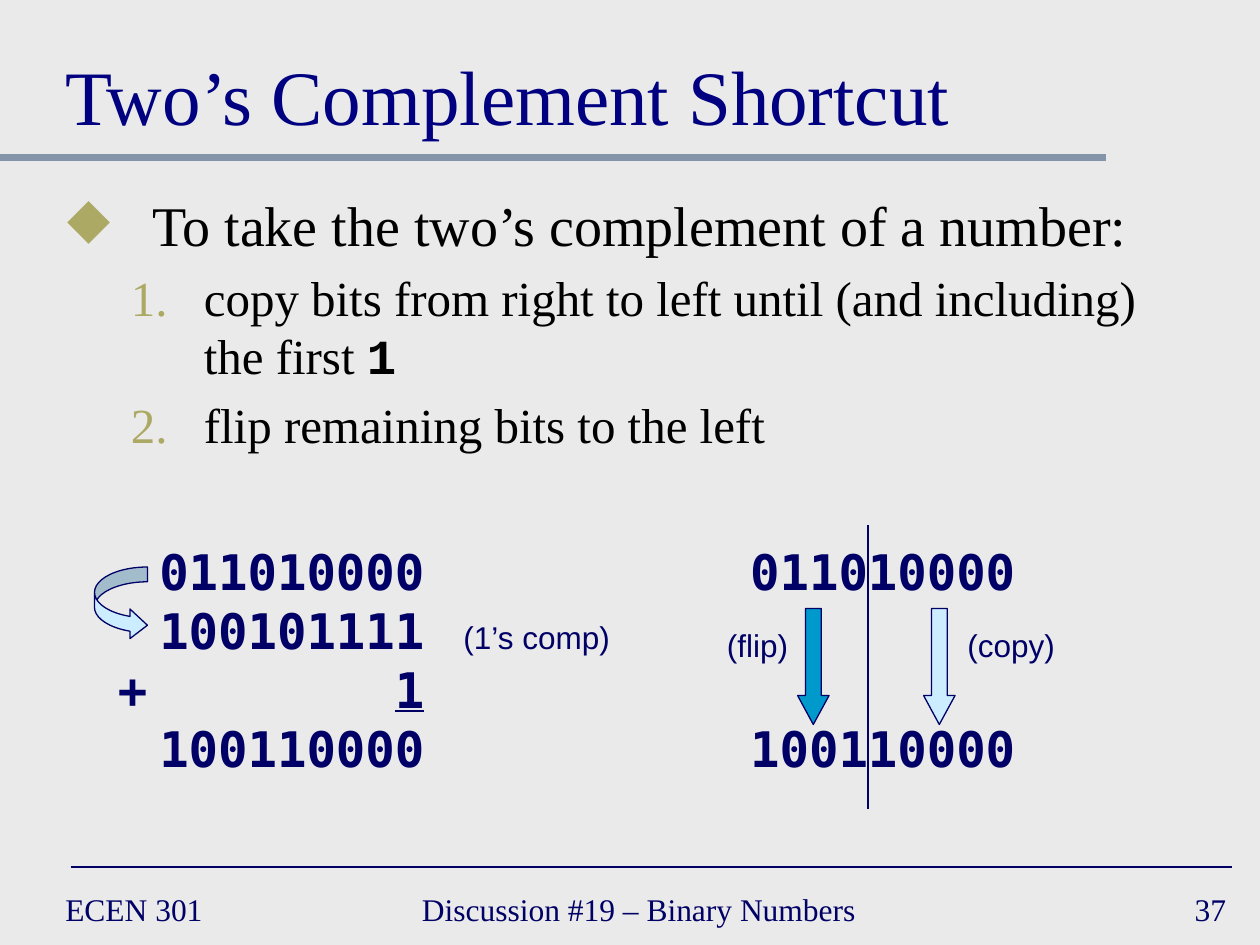
from dataclasses import dataclass

from lxml import etree
from pptx import Presentation
from pptx.dml.color import RGBColor
from pptx.enum.shapes import MSO_CONNECTOR, MSO_SHAPE
from pptx.enum.text import MSO_ANCHOR, PP_ALIGN
from pptx.oxml.ns import qn
from pptx.util import Inches, Pt

STRAIGHT = MSO_CONNECTOR.STRAIGHT
DOWN, CURVED = MSO_SHAPE.DOWN_ARROW, MSO_SHAPE.CURVED_RIGHT_ARROW
TOP, MIDDLE, BOTTOM = MSO_ANCHOR.TOP, MSO_ANCHOR.MIDDLE, MSO_ANCHOR.BOTTOM
LEFT, RIGHT = PP_ALIGN.LEFT, PP_ALIGN.RIGHT


@dataclass(frozen=True)
class Theme:
    background: str = "EAEAEA"
    title: str = "000080"
    body: str = "000000"
    ink: str = "000066"
    bullet: str = "ACA964"
    rule: str = "8495A9"
    pale: str = "CCECFF"
    strong: str = "0099CC"
    serif: str = "Times New Roman"
    sans: str = "Arial"
    digits: str = "DejaVu Sans Mono"
    code: str = "Courier New"
    title_size: int = 44
    lead_size: int = 32
    step_size: int = 28
    small_size: int = 18


THEME = Theme()
TITLE = "Two’s Complement Shortcut"
LEAD = "To take the two’s complement of a number:"
STEPS = [
    [("copy bits from right to left until (and including) the first ", False), ("1", True)],
    [("flip remaining bits to the left", False)],
]
FOOTER = [
    ("ECEN 301", 0.42, 2.17, LEFT),
    ("Discussion #19 – Binary Numbers", 3.25, 3.83, LEFT),
    ("37", 7.75, 2.08, RIGHT),
]
TAB_STOPS = [(0.24, "r"), (2.44, "r"), (2.75, "l"), (4.07, "r"), (7.13, "r"), (7.37, "l")]
SUM_ROWS = [
    [("\t\t011010000\t\t\t011010000", "digits")],
    [("\t\t100101111\t", "digits"), ("(1’s comp)", "note")],
    [("\t+\t", "digits"), ("1", "underlined")],
    [("\t\t100110000\t\t\t100110000", "digits")],
]
NOTES = [("(copy)", 7.58, 0.9), ("(flip)", 5.67, 0.69)]
ARROWS = [
    (CURVED, 0.75, 4.5, 0.42, 0.58, THEME.pale, (0.28, 0.56, 0.33)),
    (DOWN, 7.33, 4.83, 0.25, 0.92, THEME.pale, (0.5, 0.92)),
    (DOWN, 6.33, 4.83, 0.25, 0.92, THEME.strong, (0.5, 0.92)),
]
LINES = [
    (0, 1.25, 8.78, 1.25, THEME.rule, 4),
    (0.56, 6.88, 9.78, 6.88, THEME.ink, 1),
    (6.89, 4.17, 6.89, 6.42, THEME.ink, 0.75),
]


def style(run, size, face, color, bold=False, underline=False):
    font = run.font
    font.size, font.name, font.bold = Pt(size), face, bold
    font.color.rgb = RGBColor.from_string(color)
    if underline:
        font.underline = True


def add_frame(slide, left, top, width, height, anchor=TOP, wrap=True):
    frame = slide.shapes.add_textbox(*map(Inches, (left, top, width, height))).text_frame
    frame.word_wrap, frame.vertical_anchor = wrap, anchor
    return frame


def add_label(slide, text, box, size, face, color, anchor=TOP, align=LEFT, wrap=True):
    frame = add_frame(slide, *box, anchor, wrap)
    frame.text = text
    paragraph = frame.paragraphs[0]
    paragraph.alignment = align
    style(paragraph.runs[0], size, face, color)


def add_run(paragraph, text, *look):
    run = paragraph.add_run()
    run.text = text
    style(run, *look)


def add_bullet(paragraph, margin, indent, kind, **mark):
    properties = paragraph._p.get_or_add_pPr()
    properties.set("marL", str(Inches(margin)))
    properties.set("indent", str(Inches(indent)))
    color = etree.SubElement(properties, qn("a:buClr"))
    etree.SubElement(color, qn("a:srgbClr"), val=THEME.bullet)
    etree.SubElement(properties, qn(kind), **mark)


def add_instructions(slide):
    frame = add_frame(slide, 0.44, 1.46, 9.14, 2.3)
    lead = frame.paragraphs[0]
    add_bullet(lead, 0.67, -0.67, "a:buChar", char="◆")
    add_run(lead, LEAD, THEME.lead_size, THEME.serif, THEME.body)
    for parts in STEPS:
        step = frame.add_paragraph()
        step.level = 1
        add_bullet(step, 1.08, -0.58, "a:buAutoNum", type="arabicPeriod")
        step.space_before = Pt(THEME.step_size * 0.2)
        for text, is_code in parts:
            face = THEME.code if is_code else THEME.serif
            add_run(step, text, THEME.step_size, face, THEME.body, is_code)


def add_sums(slide):
    looks = {
        "digits": (THEME.step_size, THEME.digits, THEME.ink, True),
        "underlined": (THEME.step_size, THEME.digits, THEME.ink, True, True),
        "note": (THEME.small_size, THEME.sans, THEME.ink),
    }
    frame = add_frame(slide, 0.83, 4.25, 8.75, 1.97)
    for index, parts in enumerate(SUM_ROWS):
        row = frame.add_paragraph() if index else frame.paragraphs[0]
        tabs = etree.SubElement(row._p.get_or_add_pPr(), qn("a:tabLst"))
        for position, side in TAB_STOPS:
            etree.SubElement(tabs, qn("a:tab"), pos=str(Inches(position)), algn=side)
        row.line_spacing = Pt(33.7)
        for text, look in parts:
            add_run(row, text, *looks[look])


def add_arrow(slide, preset, left, top, width, height, fill, adjustments):
    arrow = slide.shapes.add_shape(preset, *map(Inches, (left, top, width, height)))
    arrow.shadow.inherit = False
    arrow.fill.solid()
    arrow.fill.fore_color.rgb = RGBColor.from_string(fill)
    arrow.line.color.rgb = RGBColor.from_string(THEME.ink)
    arrow.line.width = Pt(0.75)
    for index, value in enumerate(adjustments):
        arrow.adjustments[index] = value


def add_line(slide, x1, y1, x2, y2, color, weight):
    line = slide.shapes.add_connector(STRAIGHT, *map(Inches, (x1, y1, x2, y2)))
    line.line.color.rgb = RGBColor.from_string(color)
    line.line.width = Pt(weight)
    etree.SubElement(line._element.spPr, qn("a:effectLst"))


def main():
    """Build the two's complement shortcut slide."""
    deck = Presentation()
    deck.slide_width, deck.slide_height = Inches(10), Inches(7.5)
    slide = deck.slides.add_slide(deck.slide_layouts[6])
    slide.background.fill.solid()
    slide.background.fill.fore_color.rgb = RGBColor.from_string(THEME.background)
    *rules, divider = LINES
    for rule in rules:
        add_line(slide, *rule)
    for text, left, width, align in FOOTER:
        add_label(slide, text, (left, 7, width, 0.42), THEME.small_size, THEME.serif,
                  THEME.ink, MIDDLE, align)
    add_label(slide, TITLE, (0.42, 0.17, 9.17, 1), THEME.title_size, THEME.serif,
              THEME.title, BOTTOM)
    add_instructions(slide)
    add_sums(slide)
    for arrow in ARROWS:
        add_arrow(slide, *arrow)
    for text, left, width in NOTES:
        add_label(slide, text, (left, 4.92, width, 0.4), THEME.small_size, THEME.sans,
                  THEME.ink, wrap=False)
    add_line(slide, *divider)
    deck.save("out.pptx")


if __name__ == "__main__":
    main()
